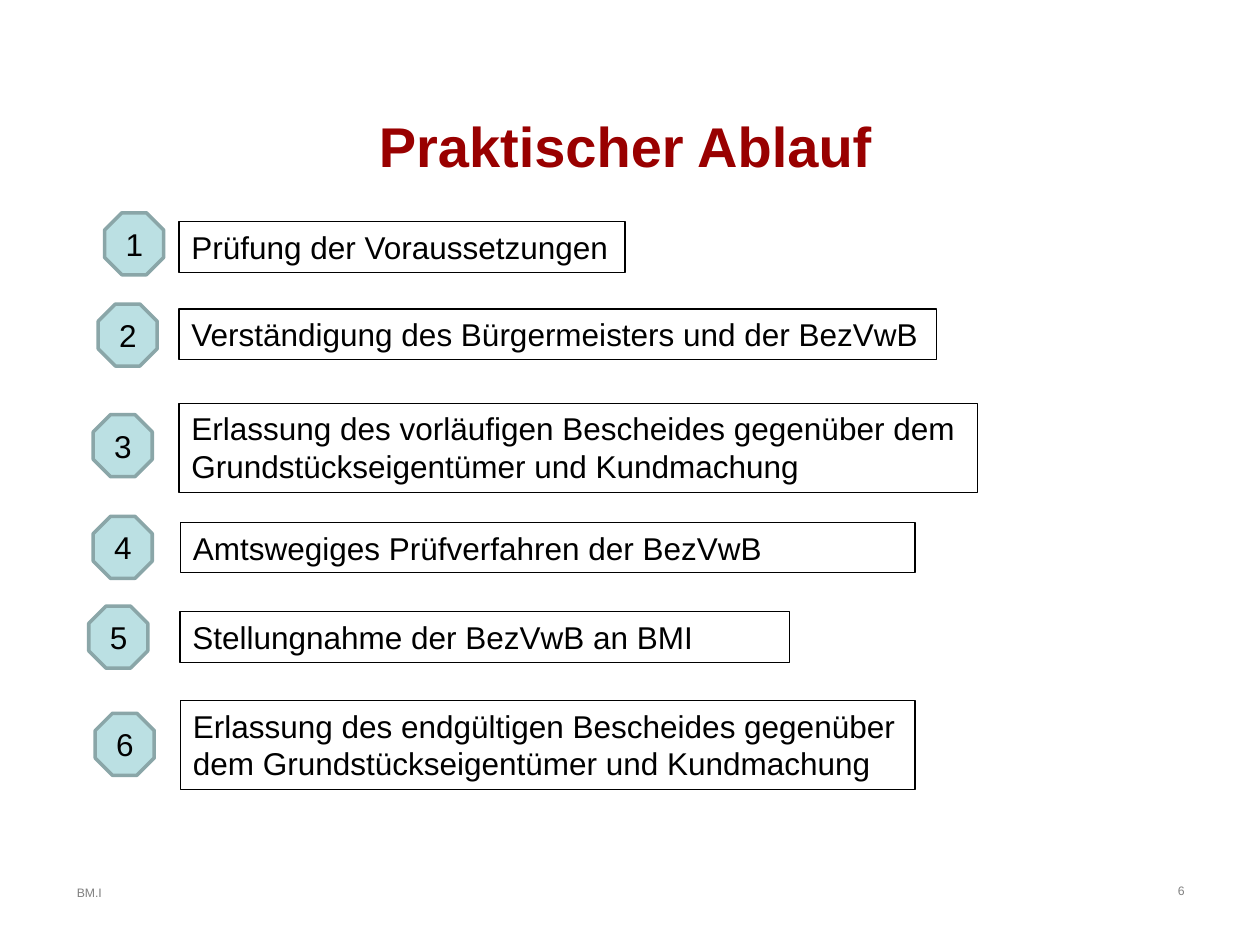
from dataclasses import dataclass

from pptx import Presentation
from pptx.dml.color import RGBColor
from pptx.enum.shapes import MSO_SHAPE as Shape
from pptx.enum.text import MSO_ANCHOR as Anchor, PP_ALIGN as Align
from pptx.util import Cm, Pt

COLORS = {
    "title": "990000",
    "text": "000000",
    "footer": "808080",
    "badge": "BBE0E3",
    "badge_line": "8AA6A8",
    "box_line": "000000",
}
BADGE_W, BADGE_H = 1.19, 1.25
LINE_H, BOX_PADDING = 0.78, 0.24


@dataclass
class Step:
    """One numbered step; lengths are in centimetres."""
    text: str
    badge_left: float
    badge_top: float
    box_left: float
    box_top: float
    box_width: float
    lines: int = 1


@dataclass
class Label:
    text: str
    left: float
    top: float
    width: float
    height: float
    size: int
    color: str
    align: Align = Align.LEFT
    anchor: Anchor = Anchor.TOP
    bold: bool = False


STEPS = [
    Step("Prüfung der Voraussetzungen", 2.11, 4.29, 3.61, 4.47, 8.99),
    Step("Verständigung des Bürgermeisters und der BezVwB",
         1.98, 6.13, 3.61, 6.23, 15.27),
    Step("Erlassung des vorläufigen Bescheides gegenüber dem "
         "Grundstückseigentümer und Kundmachung",
         1.88, 8.36, 3.61, 8.13, 16.1, 2),
    Step("Amtswegiges Prüfverfahren der BezVwB",
         1.88, 10.41, 3.64, 10.53, 14.81),
    Step("Stellungnahme der BezVwB an BMI",
         1.79, 12.22, 3.63, 12.33, 12.29),
    Step("Erlassung des endgültigen Bescheides gegenüber "
         "dem Grundstückseigentümer und Kundmachung",
         1.92, 14.38, 3.64, 14.12, 14.81, 2),
]

LABELS = [
    Label("BM.I", 1.3, 17.73, 5.59, 0.56, 7, "footer"),
    Label("Praktischer Ablauf", 1.09, 1.93, 23.04, 2.01, 32, "title",
          Align.CENTER, Anchor.MIDDLE, True),
    Label("6", 18.21, 17.68, 5.92, 1.32, 7, "footer", Align.RIGHT),
]


def rgb(name: str) -> RGBColor:
    return RGBColor.from_string(COLORS[name])


def set_text(sp, text: str, size: int, color: str = "text",
             align: Align = Align.LEFT, anchor: Anchor = Anchor.TOP,
             bold: bool = False) -> None:
    tf = sp.text_frame
    tf.word_wrap = True
    tf.vertical_anchor = anchor
    p = tf.paragraphs[0]
    p.alignment = align
    r = p.add_run()
    r.text = text
    formats = {"name": "Arial", "size": Pt(size), "bold": bold}
    for attr, value in formats.items():
        setattr(r.font, attr, value)
    r.font.color.rgb = rgb(color)


def add_label(s, label: Label) -> None:
    sp = s.shapes.add_textbox(Cm(label.left), Cm(label.top),
                              Cm(label.width), Cm(label.height))
    set_text(sp, label.text, label.size, label.color,
             label.align, label.anchor, label.bold)


def add_outlined(s, kind: Shape, left: float, top: float, width: float,
                 height: float, line: str, weight: float):
    sp = s.shapes.add_shape(kind, Cm(left), Cm(top), Cm(width), Cm(height))
    sp.shadow.inherit = False
    sp.fill.background()
    sp.line.color.rgb = rgb(line)
    sp.line.width = Pt(weight)
    return sp


def add_step(s, number: int, step: Step) -> None:
    badge = add_outlined(s, Shape.OCTAGON, step.badge_left, step.badge_top,
                         BADGE_W, BADGE_H, "badge_line", 2)
    badge.fill.solid()
    badge.fill.fore_color.rgb = rgb("badge")
    set_text(badge, str(number), 18, align=Align.CENTER, anchor=Anchor.MIDDLE)

    height = step.lines * LINE_H + BOX_PADDING
    box = add_outlined(s, Shape.RECTANGLE, step.box_left, step.box_top,
                       step.box_width, height, "box_line", 0.75)
    set_text(box, step.text, 18)


def main() -> None:
    prs = Presentation()
    prs.slide_width, prs.slide_height = Cm(25.4), Cm(19.05)
    s = prs.slides.add_slide(prs.slide_layouts[6])
    for label in LABELS:
        add_label(s, label)
    for number, step in enumerate(STEPS, 1):
        add_step(s, number, step)
    prs.save("out.pptx")


if __name__ == "__main__":
    main()
